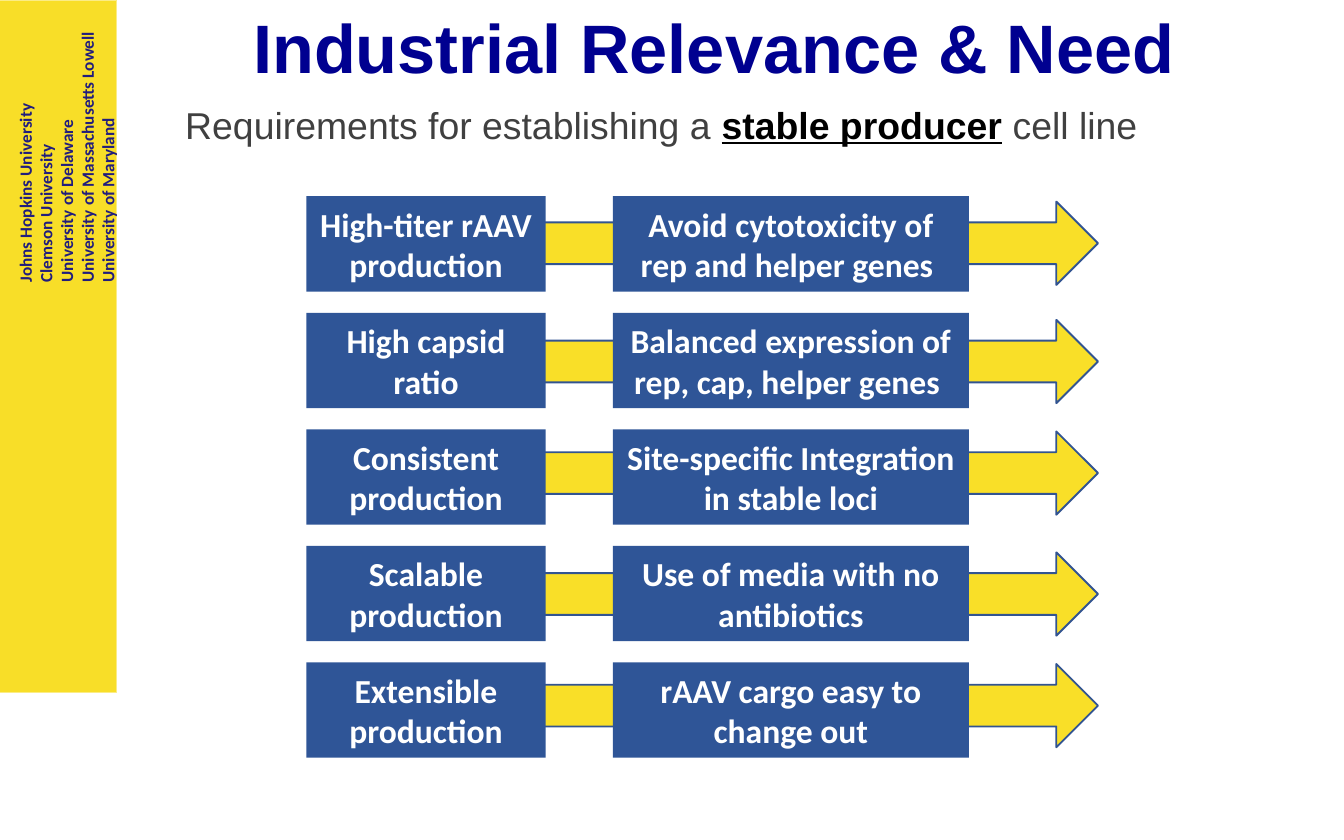
from dataclasses import dataclass
from pptx import Presentation
from pptx.dml.color import RGBColor
from pptx.enum.shapes import MSO_SHAPE
from pptx.enum.text import MSO_ANCHOR, MSO_AUTO_SIZE, PP_ALIGN
from pptx.slide import Slide
from pptx.util import Inches, Pt

RECTANGLE, ARROW = MSO_SHAPE.RECTANGLE, MSO_SHAPE.RIGHT_ARROW
TOP, MIDDLE, BOTTOM = MSO_ANCHOR.TOP, MSO_ANCHOR.MIDDLE, MSO_ANCHOR.BOTTOM
LEFT, CENTER = PP_ALIGN.LEFT, PP_ALIGN.CENTER
FIXED = MSO_AUTO_SIZE.NONE

NAVY = RGBColor(0x00, 0x00, 0x90)
INDIGO = RGBColor(0x21, 0x1D, 0x7D)
BLUE = RGBColor(0x2F, 0x55, 0x97)
OUTLINE = RGBColor(0x32, 0x54, 0x91)
GOLD = RGBColor(0xF8, 0xDE, 0x28)
ARROW_GOLD = RGBColor(0xF9, 0xDF, 0x28)
PALE_GOLD = RGBColor(0xFB, 0xEC, 0x85)
GRAY = RGBColor(0x40, 0x40, 0x40)
BLACK = RGBColor(0, 0, 0)
WHITE = RGBColor(0xFF, 0xFF, 0xFF)

CELL = 0.1
FIRST_ROW, ROW_PITCH, BOX_HEIGHT = 14.6, 8.67, 7.1
PARTNERS = [
    "Johns Hopkins University",
    "Clemson University",
    "University of Delaware",
    "University of Massachusetts Lowell",
    "University of Maryland",
]
REQUIREMENTS = [
    ("High-titer rAAV production", "Avoid cytotoxicity of rep and helper genes ", 15),
    ("High capsid ratio", "Balanced expression of rep, cap, helper genes ", 23.8),
    ("Consistent production", "Site-specific Integration in stable loci", 32.1),
    ("Scalable production", "Use of media with no antibiotics", 41.1),
    ("Extensible production", "rAAV cargo easy to change out", 49.4),
]


def grid(*cells):
    return [Inches(cell * CELL) for cell in cells]


@dataclass
class SlideBuilder:
    page: Slide
    heading_font: str = "Arial"
    label_font: str = "Calibri"

    def style(self, font, name, size, color, bold=False):
        font.name, font.size, font.bold = name, Pt(size), bold
        font.color.rgb = color

    def title(self, text, place):
        box = self.page.shapes.title
        box.left, box.top, box.width, box.height = grid(*place)
        frame = box.text_frame
        frame.auto_size, frame.vertical_anchor = FIXED, BOTTOM
        frame.margin_left = frame.margin_right = Inches(0.08)
        frame.margin_top = frame.margin_bottom = Inches(0.04)
        frame.text = text
        para = frame.paragraphs[0]
        para.alignment, para.line_spacing = CENTER, 0.9
        self.style(para.font, self.heading_font, 36.7, NAVY, True)

    def subtitle(self, spans, place):
        frame = self.page.shapes.add_textbox(*grid(*place)).text_frame
        frame.word_wrap = True
        para = frame.paragraphs[0]
        self.style(para.font, self.heading_font, 20, GRAY)
        for text, stressed in spans:
            span = para.add_run()
            span.text = text
            if stressed:
                span.font.bold = span.font.underline = True
                span.font.color.rgb = BLACK

    def shape(self, kind, place, fill, line=None, weight=1):
        shape = self.page.shapes.add_shape(kind, *grid(*place))
        shape.shadow.inherit = False
        shape.fill.solid()
        shape.fill.fore_color.rgb = fill
        if line is None:
            shape.line.fill.background()
        else:
            shape.line.color.rgb = line
            shape.line.width = Pt(weight)
        return shape

    def label(self, lines, place, fill, color, size, align=CENTER, anchor=MIDDLE, wrap=True):
        box = self.shape(RECTANGLE, place, fill)
        frame = box.text_frame
        frame.word_wrap, frame.vertical_anchor = wrap, anchor
        frame.text = "\n".join(lines)
        for para in frame.paragraphs:
            para.alignment = align
            self.style(para.font, self.label_font, size, color, True)
        return box

    def sidebar(self, partners):
        self.shape(RECTANGLE, (0, 0, 8.7, 51.5), GOLD, PALE_GOLD, 0.5)
        box = self.label(partners, (-6, 7.8, 20.8, 7.6), GOLD, INDIGO, 9.2, LEFT, TOP, False)
        box.rotation = 270

    def requirement(self, row, goal, means, arrow_top):
        top = FIRST_ROW + row * ROW_PITCH
        self.shape(ARROW, (32.7, arrow_top, 49, 6.2), ARROW_GOLD, OUTLINE)
        for text, left, width in ((goal, 22.8, 17.8), (means, 45.6, 26.5)):
            self.label([text], (left, top, width, BOX_HEIGHT), BLUE, WHITE, 18)


def main():
    deck = Presentation()
    deck.slide_width, deck.slide_height = Inches(10), Inches(6.25)
    builder = SlideBuilder(deck.slides.add_slide(deck.slide_layouts[5]))
    builder.sidebar(PARTNERS)
    builder.title("Industrial Relevance & Need", (17.6, 0.5, 71.1, 6.5))
    builder.subtitle(
        [
            ("Requirements for establishing a ", False),
            ("stable producer", True),
            (" cell line", False),
        ],
        (12.8, 7.1, 75.9, 4.4),
    )
    for row, requirement in enumerate(REQUIREMENTS):
        builder.requirement(row, *requirement)
    deck.save("out.pptx")


if __name__ == "__main__":
    main()
